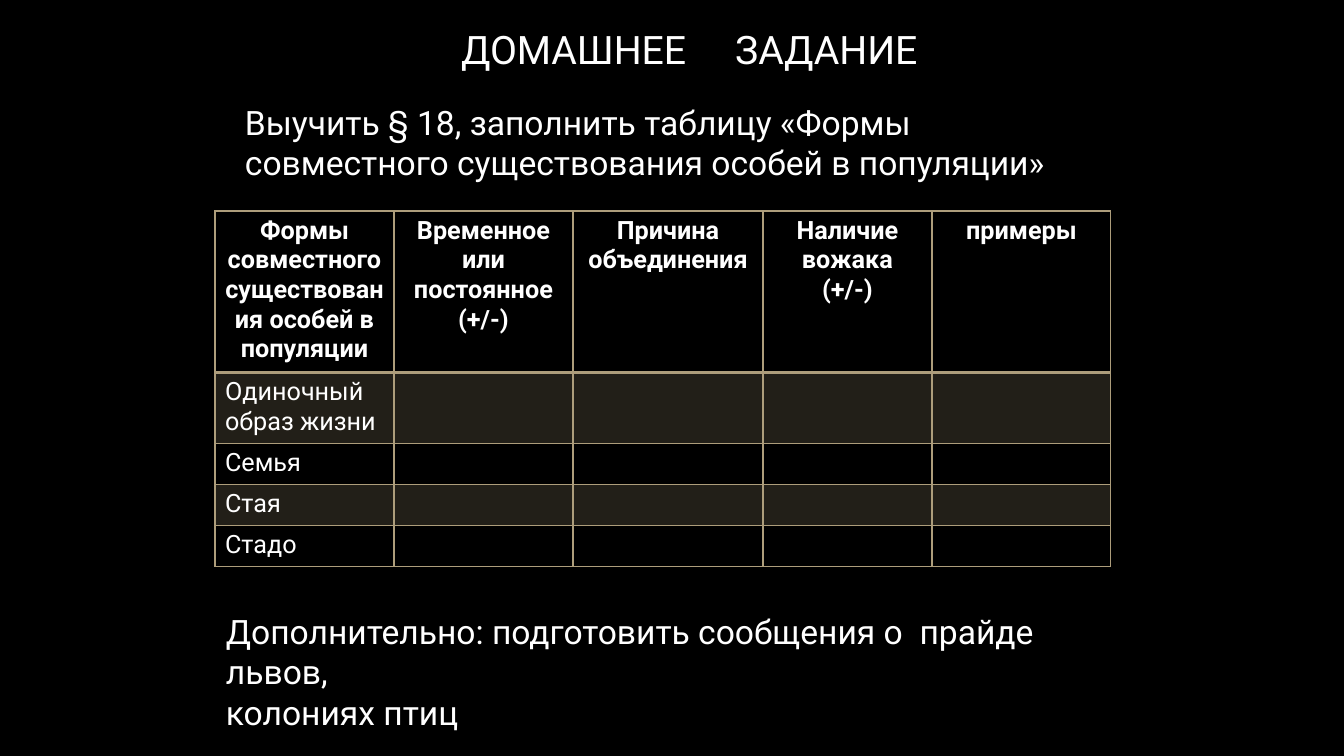
from lxml import etree
from pptx import Presentation
from pptx.dml.color import RGBColor
from pptx.enum.text import MSO_ANCHOR, MSO_AUTO_SIZE, PP_ALIGN
from pptx.oxml.ns import qn
from pptx.util import Pt

PX = 12192000 / 1344
TOP = MSO_ANCHOR.TOP
FIXED = MSO_AUTO_SIZE.NONE
LEFT, CENTER = PP_ALIGN.LEFT, PP_ALIGN.CENTER
COLORS = {"back": "000000", "text": "FFFFFF", "sand": "AD9D7B"}

COLS = [179, 179, 190, 169, 179]
ROWS = [161, 71, 41, 41, 41]
HEADS = [
    "Формы совместного существования особей в популяции",
    "Временное или постоянное\n(+/-)",
    "Причина объединения",
    "Наличие вожака\n(+/-)",
    "примеры",
]
FORMS = ["Одиночный образ жизни", "Семья", "Стая", "Стадо"]


def px(n):
    return round(n * PX)


def color(name):
    return RGBColor.from_string(COLORS[name])


class Deck:
    font = "Roboto"

    def __init__(self):
        self.prs = Presentation()
        self.prs.slide_width, self.prs.slide_height = px(1344), px(756)
        self.slide = self.prs.slides.add_slide(self.prs.slide_layouts[5])
        self.paint(self.slide.background.fill, "back")

    def paint(self, fill, name):
        fill.solid()
        fill.fore_color.rgb = color(name)

    def label(self, frame, text, size, align=LEFT, bold=False):
        frame.text = text
        for par in frame.paragraphs:
            par.alignment = align
            font = par.font
            font.name, font.size, font.bold = self.font, Pt(size), bold
            font.color.rgb = color("text")

    def title(self, text, box, stop):
        shape = self.slide.shapes.title
        shape.left, shape.top, shape.width, shape.height = map(px, box)
        frame = shape.text_frame
        frame.auto_size, frame.vertical_anchor = FIXED, TOP
        self.label(frame, text, 28)
        # Tab stop that sets the gap between the words
        props = frame.paragraphs[0]._p.get_or_add_pPr()
        tabs = etree.Element(qn("a:tabLst"))
        etree.SubElement(tabs, qn("a:tab"), pos=str(px(stop)), algn="l")
        props.insert(len(props) - 1, tabs)

    def text(self, text, box):
        frame = self.slide.shapes.add_textbox(*map(px, box)).text_frame
        frame.word_wrap = True
        self.label(frame, text, 24)

    def edges(self, cell, widths):
        props = cell._tc.get_or_add_tcPr()
        for side, width in zip("LRTB", widths):
            line = etree.SubElement(props, qn("a:ln" + side), w=str(Pt(width)))
            fill = etree.SubElement(line, qn("a:solidFill"))
            etree.SubElement(fill, qn("a:srgbClr"), val=COLORS["sand"])

    def shade(self, cell, alpha):
        self.paint(cell.fill, "sand")
        tint = cell._tc.tcPr.find(f"{qn('a:solidFill')}/{qn('a:srgbClr')}")
        etree.SubElement(tint, qn("a:alpha"), val=str(alpha * 1000))

    def table(self, data, left, top):
        box = map(px, (left, top, sum(COLS), sum(ROWS)))
        grid = self.slide.shapes.add_table(len(ROWS), len(COLS), *box).table
        grid.first_row = grid.horz_banding = False
        for col, width in zip(grid.columns, COLS):
            col.width = px(width)
        for r, (row, height) in enumerate(zip(grid.rows, ROWS)):
            row.height = px(height)
            head = r == 0
            for cell, text in zip(row.cells, data[r]):
                align = CENTER if head else LEFT
                self.label(cell.text_frame, text, 18, align, head)
                self.edges(cell, (1, 1, 2 if r == 1 else 1, 2 if head else 1))
                if r % 2:
                    self.shade(cell, 20)
                else:
                    cell.fill.background()


def main():
    deck = Deck()

    # Heading and task
    deck.title("ДОМАШНЕЕ\tЗАДАНИЕ", (451, 20, 625, 57), 274)
    deck.text(
        "Выучить § 18, заполнить таблицу «Формы "
        "совместного существования особей в популяции»",
        (235, 97, 859, 92),
    )

    # Table to fill in
    blank = [""] * (len(COLS) - 1)
    deck.table([HEADS] + [[form] + blank for form in FORMS], 215, 211)

    # Extra task
    deck.text(
        "Дополнительно: подготовить сообщения о  прайде львов,\nколониях птиц",
        (216, 606, 930, 92),
    )

    deck.prs.save("out.pptx")


if __name__ == "__main__":
    main()
